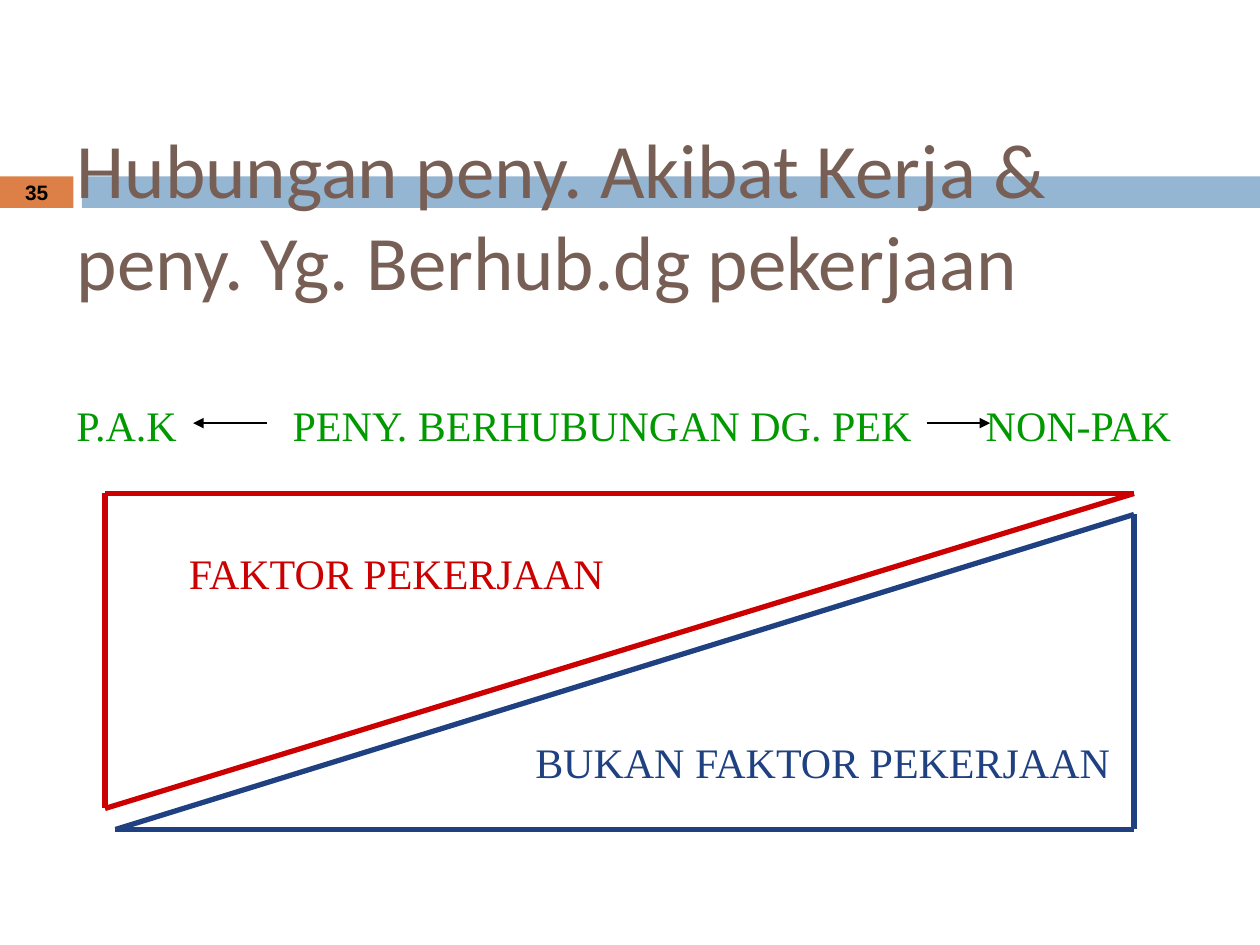
from dataclasses import dataclass
from itertools import combinations

from lxml.etree import SubElement
from pptx import Presentation
from pptx.dml.color import RGBColor as RGB
from pptx.enum.shapes import MSO_CONNECTOR as CONN, MSO_SHAPE as SHAPE
from pptx.enum.text import MSO_ANCHOR as ANCHOR, MSO_AUTO_SIZE as FIT, PP_ALIGN as ALIGN
from pptx.oxml.ns import qn
from pptx.util import Inches, Pt

ORANGE = RGB(0xDD, 0x80, 0x47)
SKY = RGB(0x94, 0xB6, 0xD2)
BROWN = RGB(0x77, 0x5F, 0x55)
NAVY = RGB(0x1F, 0x40, 0x81)
RED = RGB(0xCC, 0x00, 0x00)
GREEN = RGB(0x00, 0x99, 0x00)
BLACK = RGB(0x00, 0x00, 0x00)

UNIT = Inches(1) // 12
COLS, ROWS = 120, 90


@dataclass(frozen=True)
class Box:
    col: float
    row: float
    cols: float
    rows: float

    def emu(self) -> list[int]:
        return [round(v * UNIT) for v in (self.col, self.row, self.cols, self.rows)]


@dataclass(frozen=True)
class Band:
    box: Box
    color: RGB


@dataclass(frozen=True)
class Label:
    text: str
    box: Box
    color: RGB
    tabs: tuple[float, ...] = ()


@dataclass(frozen=True)
class Triangle:
    corners: tuple[tuple[float, float], ...]
    color: RGB


@dataclass(frozen=True)
class Arrow:
    start: float
    end: float
    row: float


BAND_ROW, BAND_ROWS = 16.8, 3
NUMBER_COLS, BAND_COL = 7, 7.8
BANDS = (
    Band(Box(0, BAND_ROW, NUMBER_COLS, BAND_ROWS), ORANGE),
    Band(Box(BAND_COL, BAND_ROW, COLS - BAND_COL, BAND_ROWS), SKY),
)
NUMBER_BOX = Box(0, 16.7, NUMBER_COLS, 3.2)
TITLE_BOX = Box(6.1, 12.85, 108, 15)
TRIANGLES = (
    Triangle(((11, 79), (108, 79), (108, 49)), NAVY),
    Triangle(((10, 77), (10, 47), (108, 47)), RED),
)
LABELS = (
    Label("FAKTOR PEKERJAAN", Box(16.8, 51.6, 42.4, 6), RED),
    Label("BUKAN FAKTOR PEKERJAAN", Box(49.8, 69.6, 57.6, 6), NAVY),
    Label("P.A.K\tPENY. BERHUBUNGAN DG. PEK\tNON-PAK",
          Box(6.1, 37.45, 108, 6), GREEN, (20.6, 86.6)),
)
ARROWS = (Arrow(25.4, 18.4, 40.3), Arrow(88.3, 94.3, 40.3))


def set_all(obj, **values) -> None:
    for name, value in values.items():
        setattr(obj, name, value)


def write(sp, text: str, font: str, size: float, color: RGB,
          bold: bool = False, align=ALIGN.LEFT, **frame):
    tf = sp.text_frame
    set_all(tf, **{"auto_size": FIT.NONE, "word_wrap": True, **frame})
    p = tf.paragraphs[0]
    p.alignment = align
    r = p.add_run()
    r.text = text
    set_all(r.font, name=font, size=Pt(size), bold=bold)
    r.font.color.rgb = color
    return p


def add_band(s, band: Band) -> None:
    sp = s.shapes.add_shape(SHAPE.RECTANGLE, *band.box.emu())
    sp.shadow.inherit = False
    sp.fill.solid()
    sp.fill.fore_color.rgb = band.color
    sp.line.fill.background()


def add_label(s, label: Label) -> None:
    sp = s.shapes.add_textbox(*label.box.emu())
    p = write(sp, label.text, "Times New Roman", 24, label.color,
              auto_size=FIT.SHAPE_TO_FIT_TEXT, word_wrap=bool(label.tabs))
    if label.tabs:
        stops = SubElement(p._p.get_or_add_pPr(), qn("a:tabLst"))
        for col in label.tabs:
            SubElement(stops, qn("a:tab"), pos=str(round(col * UNIT)), algn="l")


def add_line(s, start: tuple[float, float], end: tuple[float, float],
             color: RGB, width: float):
    points = [round(v * UNIT) for v in (*start, *end)]
    line = s.shapes.add_connector(CONN.STRAIGHT, *points)
    line.line.color.rgb = color
    line.line.width = Pt(width)
    SubElement(line._element.spPr, qn("a:effectLst"))
    return line


def add_triangle(s, triangle: Triangle) -> None:
    for start, end in combinations(triangle.corners, 2):
        add_line(s, start, end, triangle.color, 3)


def add_arrow(s, arrow: Arrow) -> None:
    line = add_line(s, (arrow.start, arrow.row), (arrow.end, arrow.row), BLACK, 0.75)
    SubElement(line.line._get_or_add_ln(), qn("a:tailEnd"), type="triangle")


def main() -> None:
    prs = Presentation()
    set_all(prs, slide_width=COLS * UNIT, slide_height=ROWS * UNIT)
    s = prs.slides.add_slide(prs.slide_layouts[5])

    for band in BANDS:
        add_band(s, band)
    number = s.shapes.add_textbox(*NUMBER_BOX.emu())
    write(number, "35", "Arial", 11.9, BLACK, bold=True, align=ALIGN.CENTER,
          vertical_anchor=ANCHOR.MIDDLE)

    title = s.shapes.title
    set_all(title, **dict(zip(("left", "top", "width", "height"), TITLE_BOX.emu())))
    write(title, "Hubungan peny. Akibat Kerja & peny. Yg. Berhub.dg pekerjaan",
          "Calibri", 44, BROWN, vertical_anchor=ANCHOR.MIDDLE)
    s.shapes._spTree.append(title._element)

    for triangle in TRIANGLES:
        add_triangle(s, triangle)
    for label in LABELS:
        add_label(s, label)
    for arrow in ARROWS:
        add_arrow(s, arrow)
    prs.save("out.pptx")


if __name__ == "__main__":
    main()
